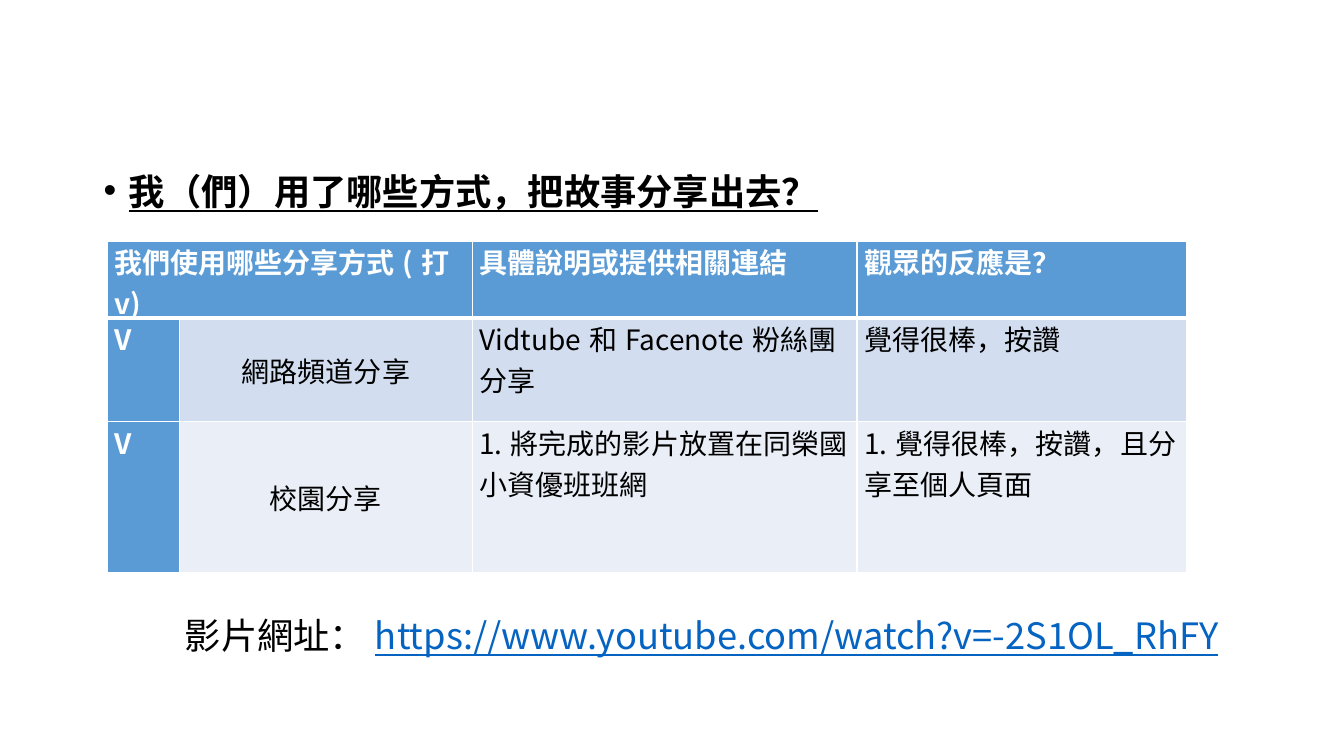
import dataclasses

import lxml.etree
import pptx
import pptx.dml.color
import pptx.enum.text
import pptx.oxml.ns
import pptx.util

Cm = pptx.util.Cm
Pt = pptx.util.Pt
Align = pptx.enum.text.PP_ALIGN
Anchor = pptx.enum.text.MSO_ANCHOR
qn = pptx.oxml.ns.qn


@dataclasses.dataclass(frozen=True)
class Theme:
    black: str = "000000"
    white: str = "FFFFFF"
    blue: str = "5B9BD5"
    bands: tuple[str, str] = ("D2DEEF", "EAEFF7")
    link: str = "0563C1"
    face: str = "Noto Sans CJK SC"
    trad: str = "Noto Sans CJK TC"
    body: float = 25.9
    cell: float = 20
    thin: float = 1
    thick: float = 3


@dataclasses.dataclass(frozen=True)
class Style:
    color: str
    size: float
    face: str
    bold: bool = False
    under: bool = False


@dataclasses.dataclass(frozen=True)
class Box:
    left: float
    top: float
    width: float
    height: float

    def place(self) -> tuple[int, ...]:
        return tuple(Cm(n) for n in dataclasses.astuple(self))


THEME = Theme()
HEAD = Style(THEME.white, THEME.cell, THEME.face, bold=True)
PLAIN = Style(THEME.black, THEME.cell, THEME.face)
TITLE = Style(THEME.black, THEME.body, THEME.face, bold=True, under=True)
LABEL = Style(THEME.black, THEME.body, THEME.trad)
LINK = Style(THEME.link, THEME.body, THEME.trad, under=True)

WIDTHS = (1.83, 7.37, 9.7, 8.31)
HEIGHTS = (1.93, 2.62, 3.81)
ROWS = (
    ("我們使用哪些分享方式(打v)", "", "具體說明或提供相關連結", "觀眾的反應是？"),
    ("V", "網路頻道分享", "Vidtube和Facenote粉絲團分享", "覺得很棒，按讚"),
    ("V", "校園分享", "1.將完成的影片放置在同榮國小資優班班網",
     "1.覺得很棒，按讚，且分享至個人頁面"),
)


def rgb(code: str) -> pptx.dml.color.RGBColor:
    return pptx.dml.color.RGBColor.from_string(code)


def dress(font, props, style: Style) -> None:
    """Style a font and name its East Asian face in the same properties."""
    font.size = Pt(style.size)
    font.bold = style.bold
    font.underline = style.under
    font.color.rgb = rgb(style.color)
    font.name = style.face
    east = lxml.etree.Element(qn("a:ea"), typeface=style.face)
    props.find(qn("a:latin")).addnext(east)


def dress_line(line, style: Style) -> None:
    font = line.font
    dress(font, line._p.pPr.find(qn("a:defRPr")), style)


def add_line(slide, box: Box):
    """Add a text box and return its tightly spaced paragraph."""
    frame = slide.shapes.add_textbox(*box.place()).text_frame
    frame.word_wrap = True
    line = frame.paragraphs[0]
    line.line_spacing = 0.7
    return line


def add_title(slide, text: str, box: Box) -> None:
    line = add_line(slide, box)
    line.text = text
    props = line._p.get_or_add_pPr()
    props.set("marL", str(Cm(0.64)))
    props.set("indent", str(-Cm(0.64)))
    lxml.etree.SubElement(props, qn("a:buFont"), typeface="Arial")
    lxml.etree.SubElement(props, qn("a:buChar"), char="•")
    dress_line(line, TITLE)


def add_link(slide, label: str, url: str, box: Box) -> None:
    line = add_line(slide, box)
    for text, style in ((label, LABEL), (url, LINK)):
        run = line.add_run()
        run.text = text
        dress(run.font, run._r.get_or_add_rPr(), style)


def add_edge(cell, side: str, width: float, index: int) -> None:
    edge = lxml.etree.Element(qn(f"a:ln{side}"), w=str(Pt(width)))
    fill = lxml.etree.SubElement(edge, qn("a:solidFill"))
    lxml.etree.SubElement(fill, qn("a:srgbClr"), val=THEME.white)
    cell._tc.get_or_add_tcPr().insert(index, edge)


def fill_cell(cell, row: int, col: int) -> None:
    key = row == 0 or col == 0
    cell.fill.solid()
    cell.fill.fore_color.rgb = rgb(THEME.blue if key else THEME.bands[row - 1])
    cell.margin_left = cell.margin_right = Cm(0.18)
    cell.margin_top = cell.margin_bottom = 0
    for index, side in enumerate("LRTB"):
        rule = (row, side) in ((0, "B"), (1, "T"))
        add_edge(cell, side, THEME.thick if rule else THEME.thin, index)
    text = ROWS[row][col]
    if not text:
        return
    line = cell.text_frame.paragraphs[0]
    line.text = text
    if row and col == 1:
        line.alignment = Align.CENTER
        cell.vertical_anchor = Anchor.MIDDLE
    dress_line(line, HEAD if key else PLAIN)


def add_grid(slide, left: float, top: float) -> None:
    box = Box(left, top, sum(WIDTHS), sum(HEIGHTS))
    shape = slide.shapes.add_table(len(HEIGHTS), len(WIDTHS), *box.place())
    table = shape.table
    table.first_row = table.horz_banding = False
    for col, width in zip(table.columns, WIDTHS):
        col.width = Cm(width)
    for row, height in zip(table.rows, HEIGHTS):
        row.height = Cm(height)
    for row in range(len(HEIGHTS)):
        for col in range(len(WIDTHS)):
            fill_cell(table.cell(row, col), row, col)
    table.cell(0, 0).merge(table.cell(0, 1))


def main() -> None:
    deck = pptx.Presentation()
    deck.slide_width, deck.slide_height = Cm(33.87), Cm(19.05)
    slide = deck.slides.add_slide(deck.slide_layouts[6])
    add_title(slide, "我（們）用了哪些方式，把故事分享出去？", Box(2.36, 4.45, 29.2, 1.2))
    add_grid(slide, 2.7, 6.08)
    add_link(slide, "影片網址：", "https://www.youtube.com/watch?v=-2S1OL_RhFY",
             Box(4.41, 15.63, 27.2, 1.2))
    deck.save("out.pptx")


if __name__ == "__main__":
    main()
